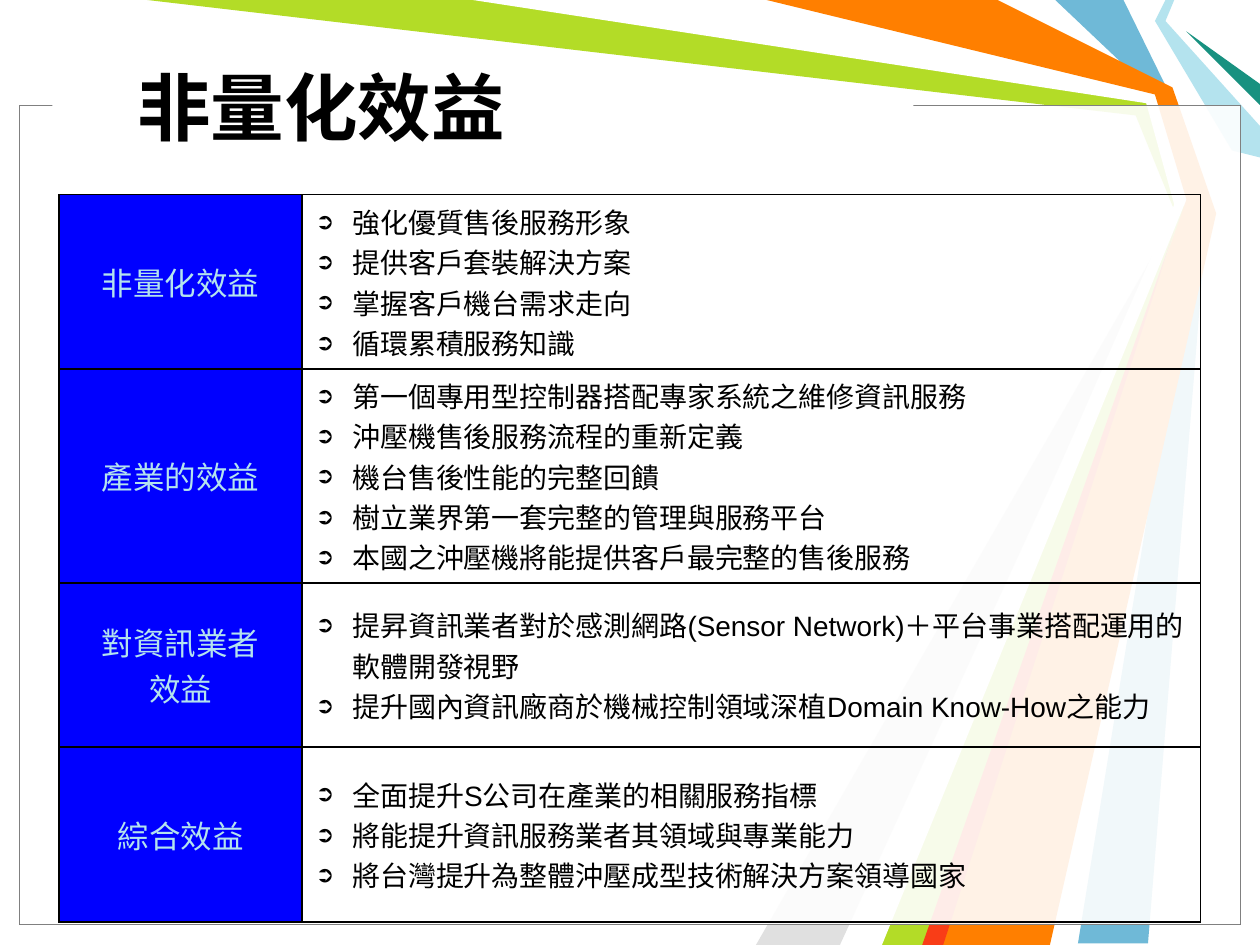
from dataclasses import dataclass
from typing import NamedTuple

from lxml.etree import SubElement
from pptx import Presentation
from pptx.dml.color import RGBColor
from pptx.enum.shapes import MSO_SHAPE
from pptx.enum.text import MSO_ANCHOR, PP_ALIGN
from pptx.oxml.ns import qn
from pptx.util import Pt


@dataclass(frozen=True)
class Theme:
    font: str = "Arial"
    title_size: float = 42
    label_size: float = 18
    body_size: float = 16
    text: str = "000000"
    label_text: str = "B4E3EE"
    label_fill: str = "0000FF"
    frame: str = "808080"
    white: str = "FFFFFF"
    blue: str = "6FB9D7"
    lime: str = "B3DC27"
    grey: str = "E0E0E0"
    pale: str = "B4E3EE"
    teal: str = "189180"
    orange: str = "FF7F00"
    red: str = "F93D17"


class Ribbon(NamedTuple):
    color: str
    points: list[tuple[float, float]]


class Box(NamedTuple):
    left: float
    top: float
    width: float
    height: float


class Benefit(NamedTuple):
    height: float
    label: list[str]
    items: list[str]


T = Theme()
BULLET = "➲"
INDENT = 21
COLUMNS = [139, 513.3]
TABLE_AT = (33.7, 111.3)
FRAME = Box(11.25, 60.3, 697.7, 468)
TITLE_GAP = Box(30, 53.3, 492, 12)
TITLE = Box(71.3, 15.8, 496, 90)

RIBBONS = [
    Ribbon(T.blue, [(642, 0), (669, 55.4), (690, 120), (656, 539.3),
                    (616.3, 539.3), (684, 120), (660, 54), (603.4, 0)]),
    Ribbon(T.lime, [(84, 0), (276, 0), (658, 56), (678, 122), (534, 540),
                    (498, 540), (673, 124.6), (649, 65.5)]),
    Ribbon(T.grey, [(480, 540), (667.5, 130.3), (432, 540)]),
    Ribbon(T.white, [(270, 0), (655, 59), (671, 117), (486, 540), (504, 540),
                     (677.5, 114), (660, 54), (432, 0)]),
    Ribbon(T.pale, [(666, 0), (660, 12), (704, 86.4), (720, 90), (720, 72),
                    (666, 12), (671, 0)]),
    Ribbon(T.teal, [(720, 60), (678, 18), (720, 48)]),
    Ribbon(T.orange, [(438, 0), (570, 0), (669.6, 50.4), (695, 122), (600, 540),
                      (528, 540), (678, 114), (660, 54)]),
    Ribbon(T.red, [(527, 540), (671, 132), (539.3, 540)]),
]

BENEFITS = [
    Benefit(99.5, ["非量化效益"],
            ["強化優質售後服務形象", "提供客戶套裝解決方案",
             "掌握客戶機台需求走向", "循環累積服務知識"]),
    Benefit(122.5, ["產業的效益"],
            ["第一個專用型控制器搭配專家系統之維修資訊服務",
             "沖壓機售後服務流程的重新定義", "機台售後性能的完整回饋",
             "樹立業界第一套完整的管理與服務平台",
             "本國之沖壓機將能提供客戶最完整的售後服務"]),
    Benefit(93.5, ["對資訊業者", "效益"],
            ["提昇資訊業者對於感測網路(Sensor Network)＋平台事業搭配運用的軟體開發視野",
             "提升國內資訊廠商於機械控制領域深植Domain Know-How之能力"]),
    Benefit(100.1, ["綜合效益"],
            ["全面提升S公司在產業的相關服務指標",
             "將能提升資訊服務業者其領域與專業能力",
             "將台灣提升為整體沖壓成型技術解決方案領導國家"]),
]


def paint(sp, fill: str, line: str | None = None, opacity: int = 100) -> None:
    sp.shadow.inherit = False
    sp.fill.solid()
    sp.fill.fore_color.rgb = RGBColor.from_string(fill)
    if opacity < 100:
        color = sp._element.spPr.find(qn("a:solidFill"))[0]
        SubElement(color, qn("a:alpha"), val=str(opacity * 1000))
    if line:
        sp.line.color.rgb = RGBColor.from_string(line)
        sp.line.width = Pt(0.75)
    else:
        sp.line.fill.background()


def add_ribbon(s, ribbon: Ribbon) -> None:
    start, *rest = ribbon.points
    builder = s.shapes.build_freeform(*start, scale=Pt(1))
    builder.add_line_segments(rest, close=True)
    paint(builder.convert_to_shape(), ribbon.color)


def add_rect(s, box: Box, line: str | None = None, opacity: int = 100) -> None:
    sp = s.shapes.add_shape(MSO_SHAPE.RECTANGLE, *map(Pt, box))
    paint(sp, T.white, line, opacity)


def write(tf, lines: list[str], size: float, color: str, bold: bool = False,
          align: PP_ALIGN = PP_ALIGN.LEFT, bullet: str = "") -> None:
    fmt = {"name": T.font, "size": Pt(size), "bold": bold}
    for i, text in enumerate(lines):
        p = tf.add_paragraph() if i else tf.paragraphs[0]
        p.alignment = align
        if bullet:
            pPr = p._p.get_or_add_pPr()
            pPr.set("marL", str(Pt(INDENT)))
            pPr.set("indent", str(-Pt(INDENT)))
            SubElement(pPr, qn("a:buSzPct"), val="80000")
            SubElement(pPr, qn("a:buFont"), typeface=T.font)
            SubElement(pPr, qn("a:buChar"), char=bullet)
        r = p.add_run()
        r.text = text
        for name, value in fmt.items():
            setattr(r.font, name, value)
        r.font.color.rgb = RGBColor.from_string(color)


def add_title(s, text: str) -> None:
    tf = s.shapes.add_textbox(*map(Pt, TITLE)).text_frame
    tf.word_wrap = True
    tf.vertical_anchor = MSO_ANCHOR.MIDDLE
    write(tf, [text], T.title_size, T.text, bold=True)


def format_cell(cell, fill: str | None) -> None:
    fmt = {"vertical_anchor": MSO_ANCHOR.MIDDLE,
           "margin_left": Pt(7.7), "margin_right": Pt(7.7),
           "margin_top": Pt(3.6), "margin_bottom": Pt(3.6)}
    for name, value in fmt.items():
        setattr(cell, name, value)
    tcPr = cell._tc.get_or_add_tcPr()
    for side in ("lnL", "lnR", "lnT", "lnB"):
        ln = SubElement(tcPr, qn(f"a:{side}"), w=str(Pt(1)))
        SubElement(SubElement(ln, qn("a:solidFill")), qn("a:srgbClr"), val=T.text)
    if fill:
        cell.fill.solid()
        cell.fill.fore_color.rgb = RGBColor.from_string(fill)
    else:
        cell.fill.background()


def add_benefit_table(s, benefits: list[Benefit]) -> None:
    height = sum(b.height for b in benefits)
    box = Box(*TABLE_AT, sum(COLUMNS), height)
    table = s.shapes.add_table(len(benefits), len(COLUMNS), *map(Pt, box)).table
    table.first_row = table.horz_banding = False
    for column, width in zip(table.columns, COLUMNS):
        column.width = Pt(width)
    for row, benefit in zip(table.rows, benefits):
        row.height = Pt(benefit.height)
        label, body = row.cells
        format_cell(label, T.label_fill)
        format_cell(body, None)
        write(label.text_frame, benefit.label, T.label_size, T.label_text,
              align=PP_ALIGN.CENTER)
        write(body.text_frame, benefit.items, T.body_size, T.text, bullet=BULLET)


def main() -> None:
    prs = Presentation()
    prs.slide_width, prs.slide_height = Pt(720), Pt(540)
    s = prs.slides.add_slide(prs.slide_layouts[6])
    for ribbon in RIBBONS:
        add_ribbon(s, ribbon)
    for line in (T.text, T.frame):
        add_rect(s, FRAME, line, opacity=69)
    add_rect(s, TITLE_GAP)
    add_title(s, "非量化效益")
    add_benefit_table(s, BENEFITS)
    prs.save("out.pptx")


if __name__ == "__main__":
    main()
